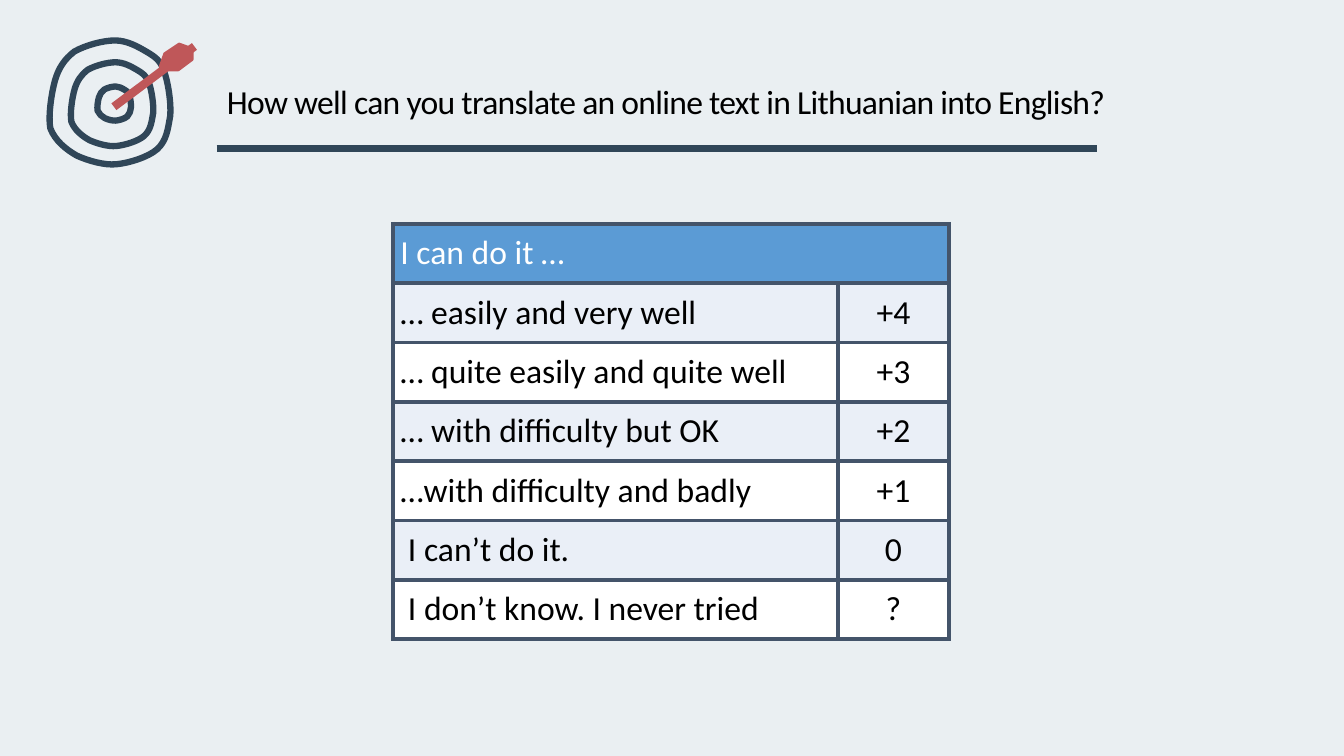
from lxml import etree
from pptx import Presentation
from pptx import util as u
from pptx.dml.color import RGBColor
from pptx.enum import shapes, text
from pptx.oxml.ns import qn
from pptx.util import Cm

FONT = "Calibri"
NAVY, RED, SLATE = "304658", "BF5759", "44546A"

ANSWERS = [
    ("… easily and very well", "+4"),
    ("… quite easily and quite well", "+3"),
    ("… with difficulty but OK", "+2"),
    ("…with difficulty and badly", "+1"),
    (" I can’t do it.", "0"),
    (" I don’t know. I never tried", "?"),
]

# Hand-drawn ring in percent of its box: a start, then Bézier triples
RING_START = (4, 32)
RING_CURVES = [
    ((7, 22), (12, 15), (20, 9)),
    ((29, 4), (44, 0), (54, 0)),
    ((64, 0), (73, 5), (80, 9)),
    ((87, 13), (92, 16), (95, 25)),
    ((98, 33), (101, 50), (100, 61)),
    ((98, 72), (97, 81), (89, 88)),
    ((82, 94), (66, 99), (55, 100)),
    ((45, 101), (31, 97), (22, 93)),
    ((13, 88), (4, 81), (0, 71)),
    ((-2, 61), (1, 42), RING_START),
]
# left, top, width, height in cm
RINGS = [(1.8, 1.57, 2.06, 2.11), (2.46, 2.18, 0.84, 0.86), (1.27, 1.02, 3.02, 3.12)]


def color(hex_code):
    return RGBColor.from_string(hex_code)


def set_line(line, hex_code, points):
    line.color.rgb = color(hex_code)
    line.width = u.Pt(points)


def set_font(paragraph, hex_code):
    paragraph.font.name = FONT
    paragraph.font.size = u.Pt(24)
    paragraph.font.color.rgb = color(hex_code)


def add_line(slide, start, end, hex_code, points):
    ends = [Cm(value) for value in (*start, *end)]
    line = slide.shapes.add_connector(shapes.MSO_CONNECTOR.STRAIGHT, *ends)
    set_line(line.line, hex_code, points)
    etree.SubElement(line._element.spPr, qn("a:effectLst"))


def add_ring(slide, left, top, width, height):
    def place(point):
        x, y = point
        return Cm(left + x * width / 100), Cm(top + y * height / 100)

    builder = slide.shapes.build_freeform(*place(RING_START))
    builder.add_line_segments([place(curve[-1]) for curve in RING_CURVES], close=True)
    ring = builder.convert_to_shape()

    # Bend each straight segment with its two control points
    segments = list(ring._element.iter(qn("a:lnTo")))
    for segment, curve in zip(segments, RING_CURVES):
        segment.tag = qn("a:cubicBezTo")
        for position, control in enumerate(curve[:2]):
            x, y = place(control)
            segment.insert(position, etree.Element(
                qn("a:pt"), x=str(x - ring.left), y=str(y - ring.top)))

    ring.fill.background()
    set_line(ring.line, NAVY, 4.5)
    ring.shadow.inherit = False


def add_feather(slide, left, top, rotation, flipped=False):
    feather = slide.shapes.add_shape(
        shapes.MSO_SHAPE.DIAGONAL_STRIPE, Cm(left), Cm(top), Cm(0.71), Cm(0.53))
    feather.rotation = rotation
    if flipped:
        feather._element.spPr.xfrm.set("flipH", "1")
    feather.fill.solid()
    feather.fill.fore_color.rgb = color(RED)
    set_line(feather.line, RED, 1.5)
    feather.shadow.inherit = False


def add_title(slide, wording):
    title = slide.shapes.add_textbox(Cm(5.47), Cm(0.76), Cm(23.42), Cm(3.68))
    frame = title.text_frame
    frame.word_wrap = True
    frame.vertical_anchor = text.MSO_ANCHOR.MIDDLE
    paragraph = frame.paragraphs[0]
    run = paragraph.add_run()
    run.text = wording
    run.font._element.set("spc", "-50")
    paragraph.line_spacing = 0.9
    set_font(paragraph, "000000")


def add_borders(cell):
    properties = cell._tc.get_or_add_tcPr()
    for side in ("a:lnL", "a:lnR", "a:lnT", "a:lnB"):
        border = etree.SubElement(properties, qn(side), w=str(u.Pt(3)))
        fill = etree.SubElement(border, qn("a:solidFill"))
        etree.SubElement(fill, qn("a:srgbClr"), val=SLATE)


def fill_cell(cell, wording, background, ink, centred):
    add_borders(cell)
    cell.fill.solid()
    cell.fill.fore_color.rgb = color(background)
    cell.margin_left = cell.margin_right = Cm(0.18)
    cell.margin_top = cell.margin_bottom = 0
    cell.vertical_anchor = text.MSO_ANCHOR.MIDDLE
    paragraph = cell.text_frame.paragraphs[0]
    paragraph.text = wording
    if centred:
        paragraph.alignment = text.PP_ALIGN.CENTER
    set_font(paragraph, ink)


def add_score_table(slide, heading, answers):
    rows = [(heading, "")] + answers
    scores = slide.shapes.add_table(
        len(rows), 2, Cm(9.91), Cm(5.64), Cm(14), Cm(10.47)).table
    scores.horz_banding = False
    scores.columns[0].width = Cm(11.21)
    scores.columns[1].width = Cm(2.79)
    for r, row in enumerate(rows):
        if r == 0:
            background, ink = "5B9BD5", "FFFFFF"
        else:
            background, ink = ("EAEFF7" if r % 2 else "FFFFFF"), "000000"
        for c, wording in enumerate(row):
            fill_cell(scores.cell(r, c), wording, background, ink, centred=c == 1)
    scores.cell(0, 0).merge(scores.cell(0, 1))


def main():
    deck = Presentation()
    deck.slide_width, deck.slide_height = Cm(33.87), Cm(19.05)
    slide = deck.slides.add_slide(deck.slide_layouts[6])
    slide.background.fill.solid()
    slide.background.fill.fore_color.rgb = color("EAEFF2")

    # Rule under the title
    add_line(slide, (5.46, 3.74), (27.64, 3.74), NAVY, 4.5)

    # Target with its dart
    for ring in RINGS:
        add_ring(slide, *ring)
    add_line(slide, (2.87, 2.69), (4.9, 1.17), RED, 6)
    add_feather(slide, 4.14, 1.24, 180)
    add_feather(slide, 4.04, 1.17, 289.7, flipped=True)

    # Question and its scores
    add_score_table(slide, "I can do it …", ANSWERS)
    add_title(slide, "How well can you translate an online text in Lithuanian into English?")

    deck.save("out.pptx")


if __name__ == "__main__":
    main()
